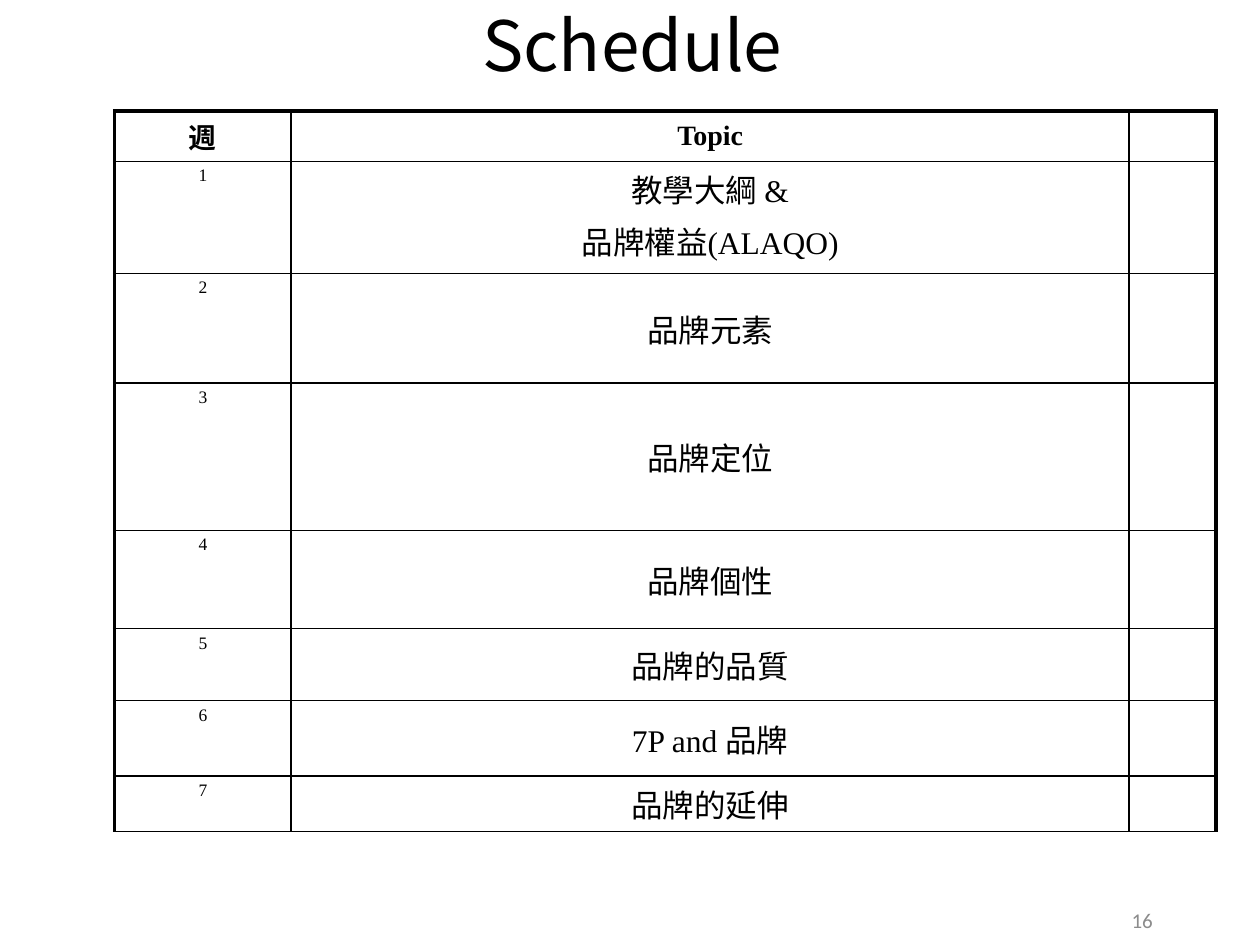
"""Build the weekly course schedule slide."""
from dataclasses import dataclass

from lxml import etree
from pptx import Presentation
from pptx import util as u
from pptx.dml.color import RGBColor
from pptx.enum import text
from pptx.oxml.ns import qn

COLOURS = {"ink": "000000", "muted": "8C8C8C"}
CJK_FONT = "Noto Sans CJK SC"
MIDDLE, TOP = text.MSO_ANCHOR.MIDDLE, text.MSO_ANCHOR.TOP
CENTRE, RIGHT = text.PP_ALIGN.CENTER, text.PP_ALIGN.RIGHT
THIN, THICK = u.Pt(1), u.Pt(2.25)
COLUMN_WIDTHS = (3.56, 16.89, 1.75)
CELL_FORMAT = {
    "margin_left": u.Cm(0.33),
    "margin_right": u.Cm(0.33),
    "margin_top": u.Cm(0.1),
    "margin_bottom": u.Cm(0.1),
}


@dataclass(frozen=True)
class Style:
    size: float
    font: str = "Times New Roman"
    colour: str = "ink"
    bold: bool = False
    align: text.PP_ALIGN = CENTRE
    space_ratio: float = 0.2


@dataclass(frozen=True)
class Week:
    label: str
    topics: tuple[str, ...]
    height: float
    topic_anchor: text.MSO_ANCHOR = MIDDLE


@dataclass(frozen=True)
class Caption:
    words: str
    box: tuple[float, float, float, float]
    style: Style


HEADING = Style(16, bold=True)
NUMBER = Style(10)
TOPIC = Style(18)
WEEKS = (
    Week("週", ("Topic",), 0.91),
    Week("1", ("教學大綱 &", "品牌權益(ALAQO)"), 2.26, TOP),
    Week("2", ("品牌元素",), 2.21),
    Week("3", ("品牌定位",), 2.97),
    Week("4", ("品牌個性",), 1.98),
    Week("5", ("品牌的品質",), 1.45),
    Week("6", ("7P and 品牌",), 1.52),
    Week("7", ("品牌的延伸",), 1.02),
)
CAPTIONS = (
    Caption("16", (21.74, 18.26, 1.75, 0.58),
            Style(12, "Calibri", "muted", align=RIGHT, space_ratio=0)),
    Caption("Schedule", (1.32, 0.13, 22.86, 1.52),
            Style(39.6, CJK_FONT, space_ratio=0)),
)


def write(frame, lines: tuple[str, ...], style: Style) -> None:
    """Fill a text frame with one styled paragraph per line."""
    for index, line in enumerate(lines):
        paragraph = frame.add_paragraph() if index else frame.paragraphs[0]
        paragraph.alignment = style.align
        paragraph.space_before = u.Pt(style.size * style.space_ratio)
        run = paragraph.add_run()
        run.text = line
        values = {"name": style.font, "size": u.Pt(style.size), "bold": style.bold}
        for name, value in values.items():
            setattr(run.font, name, value)
        run.font.color.rgb = RGBColor.from_string(COLOURS[style.colour])
        etree.SubElement(run.font._element, qn("a:ea"), typeface=CJK_FONT)


def draw_borders(cell, widths: dict[str, int]) -> None:
    """Add solid cell borders, given in schema order."""
    properties = cell._tc.get_or_add_tcPr()
    for index, (side, width) in enumerate(widths.items()):
        line = etree.Element(qn(f"a:ln{side}"), w=str(width))
        fill = etree.SubElement(line, qn("a:solidFill"))
        etree.SubElement(fill, qn("a:srgbClr"), val=COLOURS["ink"])
        properties.insert(index, line)


def draw_schedule(slide) -> None:
    """Draw the table of weeks and topics."""
    total_height = sum(week.height for week in WEEKS)
    schedule = slide.shapes.add_table(
        len(WEEKS), len(COLUMN_WIDTHS), u.Cm(2.31), u.Cm(2.24),
        u.Cm(sum(COLUMN_WIDTHS)), u.Cm(total_height)).table
    schedule.first_row = schedule.horz_banding = False
    for column, width in zip(schedule.columns, COLUMN_WIDTHS):
        column.width = u.Cm(width)
    last_column = len(COLUMN_WIDTHS) - 1
    for row, week in enumerate(WEEKS):
        schedule.rows[row].height = u.Cm(week.height)
        label_style, topic_style = (NUMBER, TOPIC) if row else (HEADING, HEADING)
        contents = (
            ((week.label,), label_style, TOP if row else MIDDLE),
            (week.topics, topic_style, week.topic_anchor),
            ((), TOPIC, TOP),
        )
        for column, (lines, style, anchor) in enumerate(contents):
            cell = schedule.cell(row, column)
            for name, value in CELL_FORMAT.items():
                setattr(cell, name, value)
            cell.vertical_anchor = anchor
            cell.fill.background()
            write(cell.text_frame, lines, style)
            draw_borders(cell, {
                "L": THIN if column else THICK,
                "R": THICK if column == last_column else THIN,
                "T": THIN if row else THICK,
                "B": THIN,
            })


def draw_caption(slide, caption: Caption) -> None:
    """Draw a line of text outside the table."""
    frame = slide.shapes.add_textbox(*map(u.Cm, caption.box)).text_frame
    values = {"word_wrap": True, "vertical_anchor": MIDDLE,
              "margin_top": 0, "margin_bottom": 0}
    for name, value in values.items():
        setattr(frame, name, value)
    write(frame, (caption.words,), caption.style)


def main() -> None:
    """Build and save the presentation."""
    deck = Presentation()
    deck.slide_width, deck.slide_height = u.Cm(25.4), u.Cm(19.05)
    slide = deck.slides.add_slide(deck.slide_layouts[6])
    draw_schedule(slide)
    for caption in CAPTIONS:
        draw_caption(slide, caption)
    deck.save("out.pptx")


if __name__ == "__main__":
    main()
